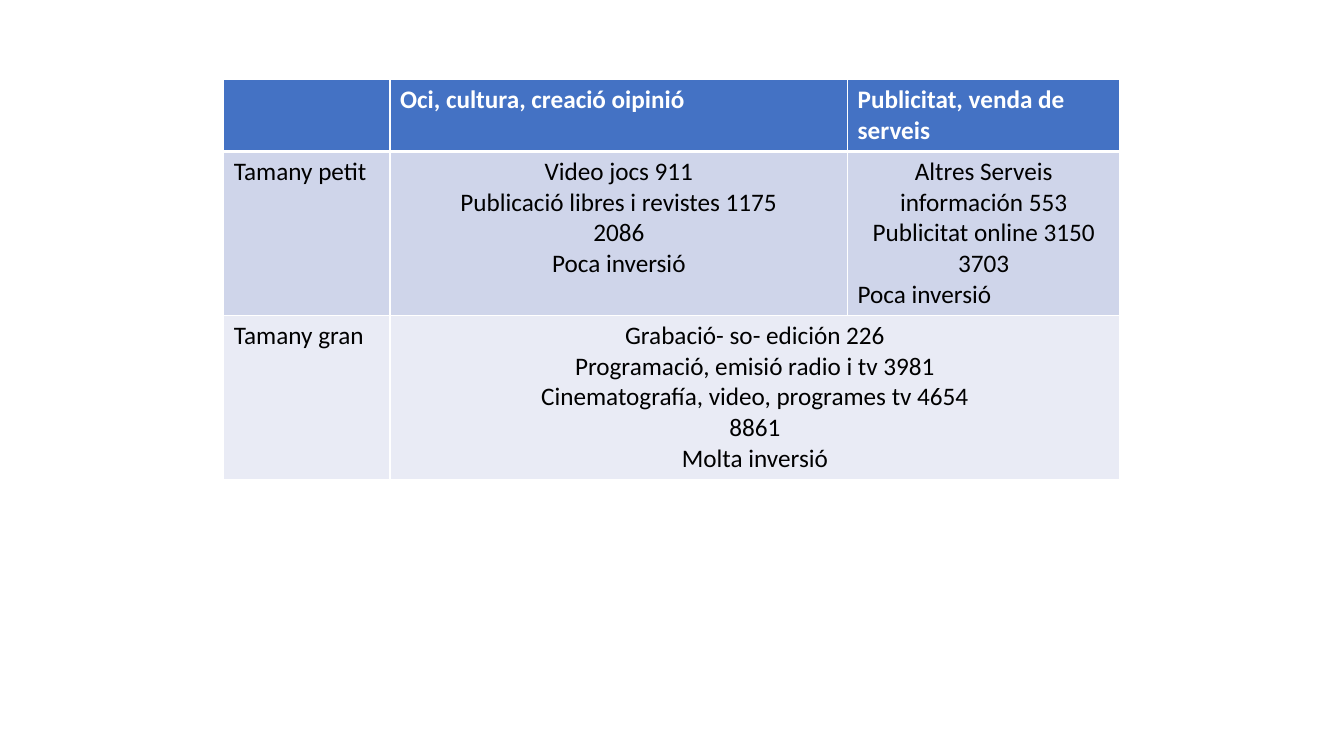
from lxml import etree
from pptx import Presentation
from pptx import util as u
from pptx.dml.color import RGBColor
from pptx.enum import text
from pptx.oxml.ns import qn

WHITE = RGBColor(0xFF, 0xFF, 0xFF)
BLACK = RGBColor(0x00, 0x00, 0x00)
HEADER_BLUE = RGBColor(0x44, 0x72, 0xC4)
BAND_DARK = RGBColor(0xCF, 0xD5, 0xEA)
BAND_LIGHT = RGBColor(0xE9, 0xEB, 0xF5)
ROW_FILLS = [HEADER_BLUE, BAND_DARK, BAND_LIGHT]

LEFT, CENTER = text.PP_ALIGN.LEFT, text.PP_ALIGN.CENTER
COLUMN_WIDTHS = [4.19, 11.53, 6.86]
ROW_HEIGHTS = [1.75, 4.1, 4.1]

# Each cell is a list of (line, alignment) pairs.
CELLS = [
    [
        [],
        [("Oci, cultura, creació oipinió", LEFT)],
        [("Publicitat, venda de serveis", LEFT)],
    ],
    [
        [("Tamany petit", LEFT)],
        [("Video jocs 911", CENTER),
         ("Publicació libres i revistes 1175", CENTER),
         ("2086", CENTER),
         ("Poca inversió", CENTER)],
        [("Altres Serveis información 553", CENTER),
         ("Publicitat online 3150", CENTER),
         ("3703", CENTER),
         ("Poca inversió", LEFT)],
    ],
    [
        [("Tamany gran", LEFT)],
        [("Grabació- so- edición 226", CENTER),
         ("Programació, emisió radio i tv 3981", CENTER),
         ("Cinematografía, video, programes tv 4654", CENTER),
         ("8861", CENTER),
         ("Molta inversió", CENTER)],
        [],
    ],
]


class SlideBuilder:
    font_name = "Calibri"
    font_size = u.Pt(18)

    def __init__(self, slide):
        self.slide = slide

    def table(self, left, top, widths, heights):
        frame = self.slide.shapes.add_table(
            len(heights), len(widths), u.Cm(left), u.Cm(top),
            u.Cm(sum(widths)), u.Cm(sum(heights)))
        table = frame.table
        for column, width in zip(table.columns, widths):
            column.width = u.Cm(width)
        for row, height in zip(table.rows, heights):
            row.height = u.Cm(height)
        return table

    def borders(self, cell, **points):
        """Draw white cell borders; sides are keyed L, R, T and B."""
        properties = cell._tc.get_or_add_tcPr()
        for side, width in points.items():
            line = etree.SubElement(properties, qn(f"a:ln{side}"), w=str(u.Pt(width)))
            fill = etree.SubElement(line, qn("a:solidFill"))
            etree.SubElement(fill, qn("a:srgbClr"), val=str(WHITE))

    def cell(self, cell, lines, fill, color, bold):
        cell.fill.solid()
        cell.fill.fore_color.rgb = fill
        frame = cell.text_frame
        for index, (line, alignment) in enumerate(lines):
            para = frame.add_paragraph() if index else frame.paragraphs[0]
            para.text = line
            para.alignment = alignment
            para.font.name = self.font_name
            para.font.size = self.font_size
            para.font.bold = bold
            para.font.color.rgb = color


def main():
    deck = Presentation()
    deck.slide_width, deck.slide_height = u.Cm(33.87), u.Cm(19.05)
    builder = SlideBuilder(deck.slides.add_slide(deck.slide_layouts[6]))

    table = builder.table(5.64, 2.01, COLUMN_WIDTHS, ROW_HEIGHTS)
    for r, (row, fill) in enumerate(zip(CELLS, ROW_FILLS)):
        header = r == 0
        for c, lines in enumerate(row):
            cell = table.cell(r, c)
            builder.borders(cell, L=1, R=1, T=3 if r == 1 else 1, B=3 if header else 1)
            builder.cell(cell, lines, fill, WHITE if header else BLACK, header)
    table.cell(2, 1).merge(table.cell(2, 2))

    deck.save("out.pptx")


if __name__ == "__main__":
    main()
